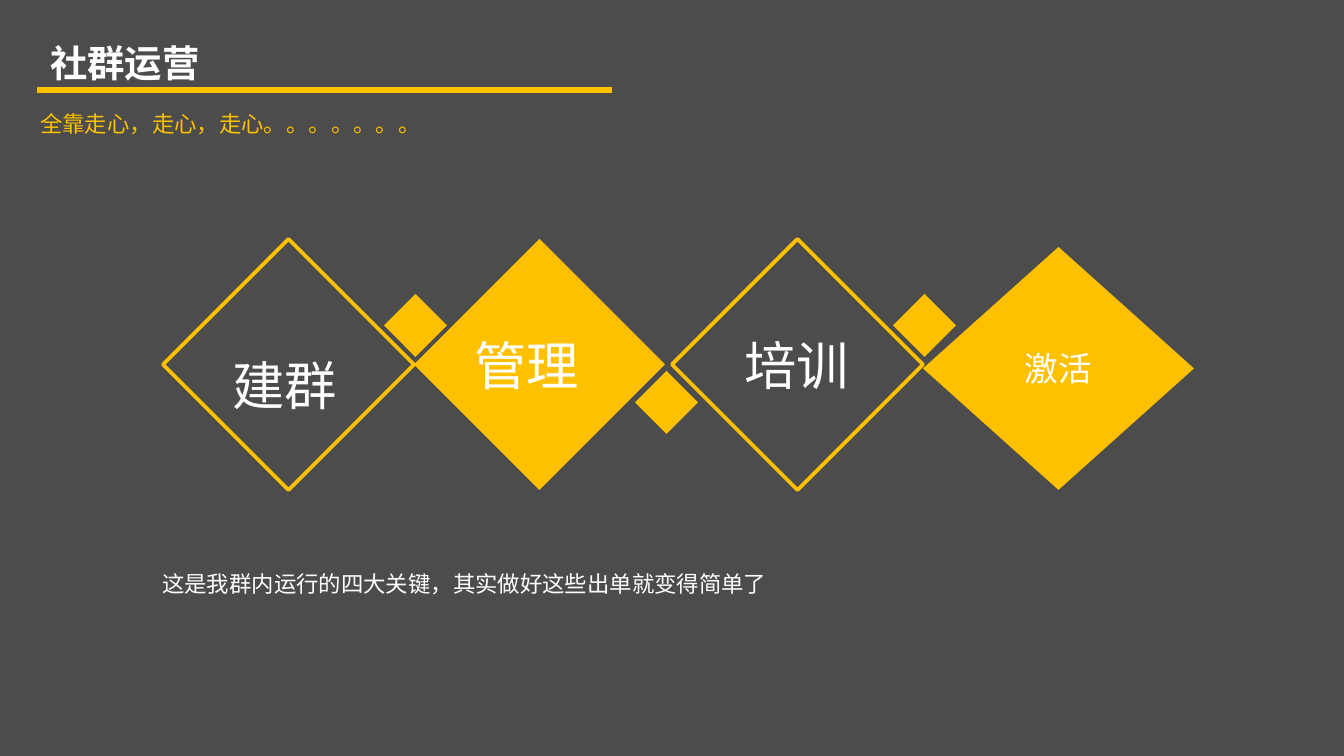
"""Build the community operations slide: a heading, four linked diamonds and a closing remark."""
from pptx import Presentation, util as u
from pptx.dml.color import RGBColor
from pptx.enum import shapes, text
from pptx.oxml.ns import qn
from lxml import etree

THEME = {
    "ground": RGBColor.from_string("4C4C4C"),
    "gold": RGBColor.from_string("FFC000"),
    "white": RGBColor.from_string("FFFFFF"),
    "font": "Roboto",
    "stage_font": "Calibri",
    "title": u.Pt(20),
    "body": u.Pt(12),
    "label": u.Pt(28),
    "stage": u.Pt(18),
    "rule": u.Pt(3),
    "outline": u.Pt(2),
}
SCALE = 914400 / 134.4


def px(*lengths):
    return [u.Emu(round(length * SCALE)) for length in lengths]


def write(holder, words, paragraph_format, font_format):
    paragraph = holder.text_frame.paragraphs[0]
    run = paragraph.add_run()
    run.text = words
    for target, values in ((paragraph, paragraph_format), (run.font, font_format)):
        for name, value in values.items():
            setattr(target, name, value)


deck = Presentation()
deck.slide_width, deck.slide_height = px(1344, 756)
slide = deck.slides.add_slide(deck.slide_layouts[6])
slide.background.fill.solid()
slide.background.fill.fore_color.rgb = THEME["ground"]

rule = slide.shapes.add_connector(shapes.MSO_CONNECTOR.STRAIGHT, *px(37, 90, 612, 90))
rule.line.color.rgb = THEME["gold"]
rule.line.width = THEME["rule"]
etree.SubElement(rule._element.spPr, qn("a:effectLst"))

stages = [
    ((163, 239, 251, 251), False, ""),
    ((414, 239, 251, 251), True, ""),
    ((672, 239, 251, 251), False, ""),
    ((923, 247, 271, 243), True, "激活"),
]
links = [((left, top, 63, 63), True, "") for left, top in ((384, 294), (635, 371), (893, 294))]
for place, filled, words in stages + links:
    diamond = slide.shapes.add_shape(shapes.MSO_SHAPE.DIAMOND, *px(*place))
    diamond.shadow.inherit = False
    if filled:
        diamond.fill.solid()
        diamond.fill.fore_color.rgb = THEME["gold"]
        diamond.line.fill.background()
    else:
        diamond.fill.background()
        diamond.line.color.rgb = THEME["gold"]
        diamond.line.width = THEME["outline"]
    if words:
        diamond.text_frame.vertical_anchor = text.MSO_ANCHOR.MIDDLE
        write(diamond, words, {"alignment": text.PP_ALIGN.CENTER},
              {"size": THEME["stage"], "name": THEME["stage_font"]})
        diamond.text_frame.paragraphs[0].runs[0].font.color.rgb = THEME["white"]

captions = [
    ("全靠走心，走心，走心。。。。。。。", (27, 90, 615, 54), "body", "gold", 1.5),
    ("社群运营", (37, 11, 489, 81), "title", "white", 1.5),
    ("这是我群内运行的四大关键，其实做好这些出单就变得简单了", (149, 550, 1046, 54), "body", "white", 1.5),
    ("建群", (219, 347, 140, 77), "label", "white", 1.0),
    ("管理", (461, 327, 156, 77), "label", "white", 1.0),
    ("培训", (731, 327, 134, 77), "label", "white", 1.0),
]
for words, place, size, colour, spacing in captions:
    caption = slide.shapes.add_textbox(*px(*place))
    frame_format = {"word_wrap": True, "auto_size": text.MSO_AUTO_SIZE.SHAPE_TO_FIT_TEXT}
    for name, value in frame_format.items():
        setattr(caption.text_frame, name, value)
    write(caption, words, {"line_spacing": spacing},
          {"size": THEME[size], "name": THEME["font"], "bold": size == "title"})
    caption.text_frame.paragraphs[0].runs[0].font.color.rgb = THEME[colour]

deck.save("out.pptx")
